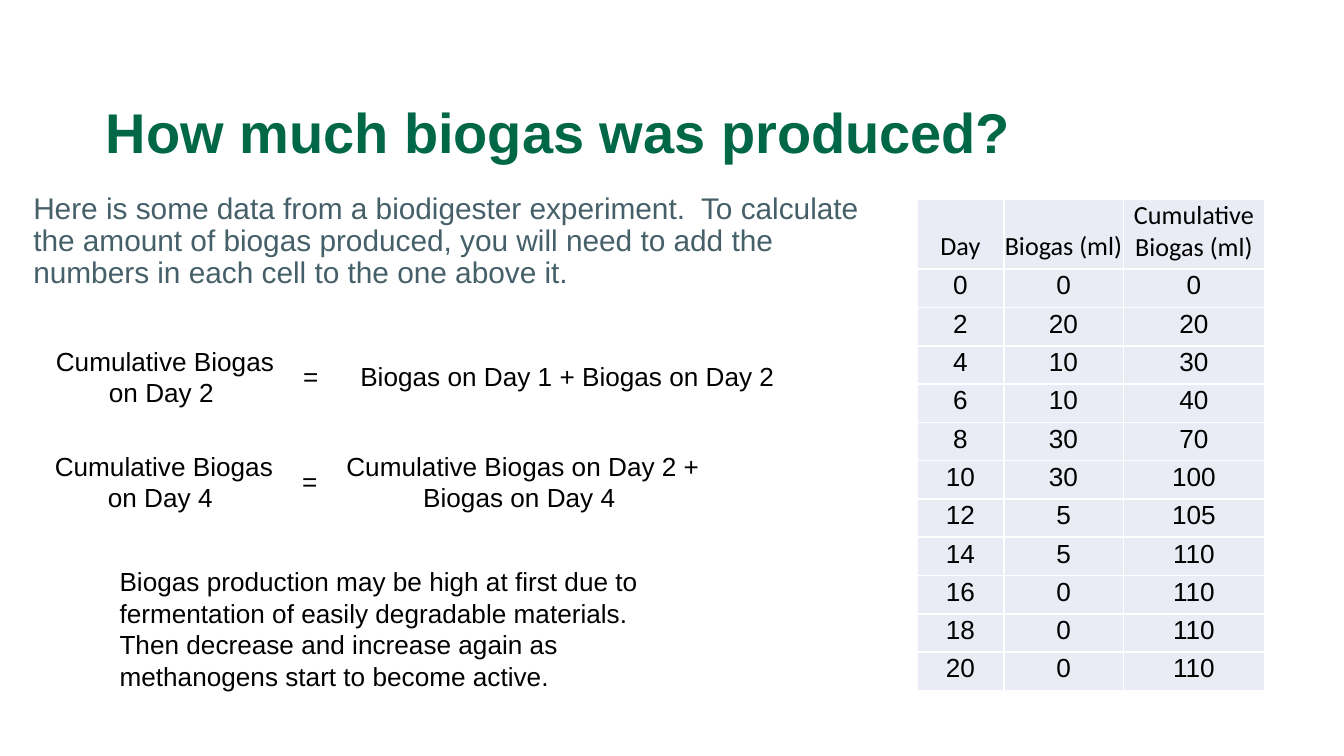
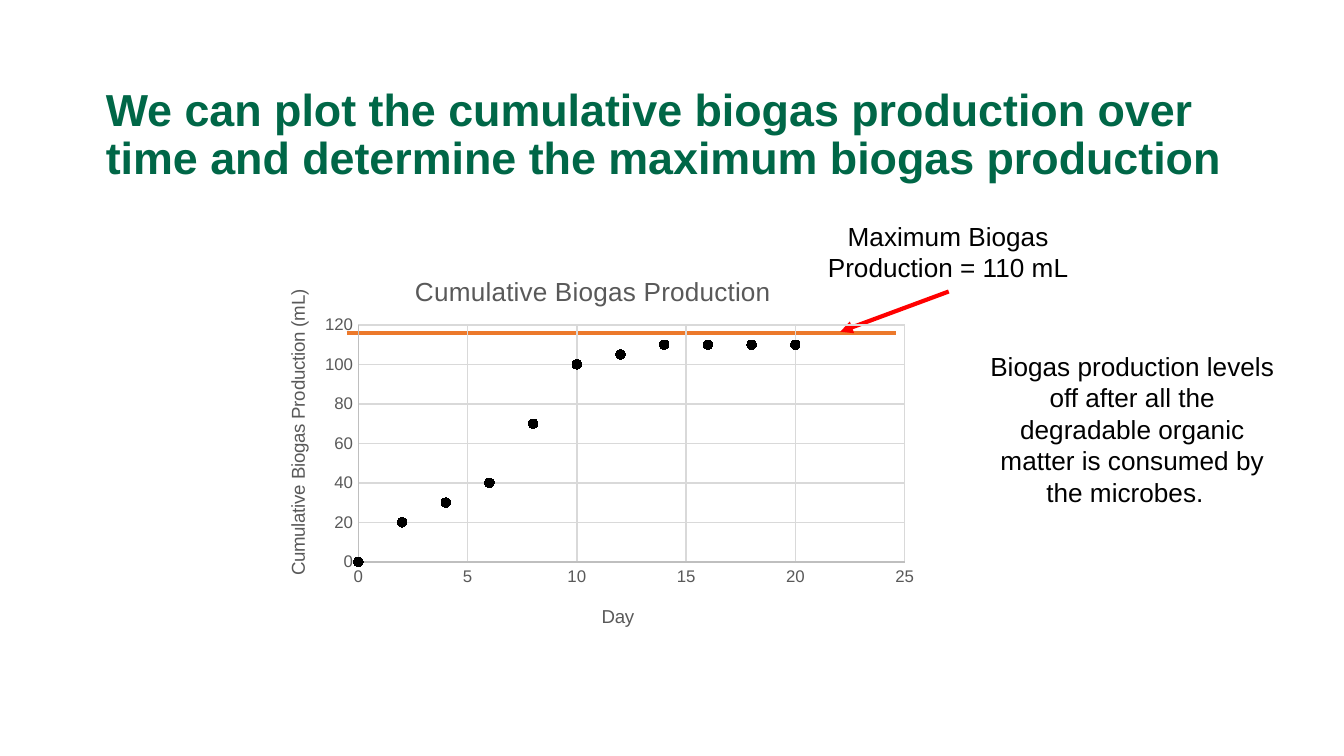
from lxml import etree
from pptx import Presentation
from pptx.chart.data import XyChartData
from pptx.dml.color import RGBColor
from pptx.enum.chart import XL_CHART_TYPE, XL_MARKER_STYLE, XL_TICK_MARK
from pptx.enum.shapes import MSO_CONNECTOR
from pptx.enum.text import MSO_ANCHOR, PP_ALIGN
from pptx.oxml import parse_xml
from pptx.oxml.ns import nsdecls, qn
from pptx.util import Cm, Pt

LEFT, CENTER = PP_ALIGN.LEFT, PP_ALIGN.CENTER
TOP, MIDDLE, BOTTOM = MSO_ANCHOR.TOP, MSO_ANCHOR.MIDDLE, MSO_ANCHOR.BOTTOM
NO_TICKS = XL_TICK_MARK.NONE

# Shared style
GREEN, SLATE, BLACK, WHITE = "006747", "466069", "000000", "FFFFFF"
CELL_BLUE, ORANGE, RED = "E9EBF5", "EC792B", "FF0000"
CHART_TEXT, AXIS_LINE, GRID_LINE = "595959", "BFBFBF", "D9D9D9"
TITLE_BOX = (1.75, 1.6, 21.9, 1.93)

# Content
DATA_TITLE = "How much biogas was produced?"
PLOT_TITLE = ("We can plot the cumulative biogas production over time "
              "and determine the maximum biogas production")
INTRO = ("Here is some data from a biodigester experiment.  To calculate the amount of "
         "biogas produced, you will need to add the numbers in each cell to the one above it.")
EXPLANATION = ("Biogas production may be high at first due to fermentation of easily degradable "
               "materials.  Then decrease and increase again as methanogens start to become active.")
MAXIMUM = "Maximum Biogas Production = 110 mL"
LEVELLING = ("Biogas production levels off after all the degradable organic matter "
             "is consumed by the microbes.  ")
# result, sum, centre line, left of result, left of sum, lines in sum (cm)
EQUATIONS = [
    ("Cumulative Biogas on Day 2 ", "Biogas on Day 1 + Biogas on Day 2 ", 7.12, 0.76, 6.4, 1),
    ("Cumulative Biogas on Day 4 ", "Cumulative Biogas on Day 2 + Biogas on Day 4 ",
     9.11, 0.74, 5.49, 2),
]
LINE_HEIGHTS = {1: 0.86, 2: 1.45}
RESULT_WIDTH, SIGN_WIDTH, SUM_WIDTH = 4.72, 0.91, 8.79

HEADINGS = ("Day", "Biogas (ml)", "Cumulative Biogas (ml)")
COLUMN_WIDTHS = (1.64, 2.26, 2.67)
DAYS = list(range(0, 21, 2))
DAILY = [0, 20, 10, 10, 30, 30, 5, 5, 0, 0, 0]
CUMULATIVE = [0, 20, 30, 40, 70, 100, 105, 110, 110, 110, 110]


def rgb(value):
    return RGBColor.from_string(value)


def style_font(font, size, color, bold=False, name="Arial"):
    font.name, font.size, font.bold = name, Pt(size), bold
    font.color.rgb = rgb(color)


def fill_text(frame, text, size=14, color=BLACK, bold=False, name="Arial",
              align=LEFT, spacing=None, indent=None):
    paragraph = frame.paragraphs[0]
    paragraph.alignment = align
    if spacing:
        paragraph.line_spacing = spacing
    if indent:
        paragraph._p.get_or_add_pPr().set("marL", str(Cm(indent)))
    run = paragraph.add_run()
    run.text = text
    style_font(run.font, size, color, bold, name)


def add_text(slide, text, box, anchor=TOP, **text_format):
    frame = slide.shapes.add_textbox(*map(Cm, box)).text_frame
    frame.word_wrap = True
    frame.vertical_anchor = anchor
    fill_text(frame, text, **text_format)


def add_titled_slide(deck, title, size):
    slide = deck.slides.add_slide(deck.slide_layouts[6])
    add_text(slide, title, TITLE_BOX, anchor=MIDDLE, size=size, color=GREEN,
             bold=True, spacing=0.9)
    return slide


def add_line(slide, start, end, color, arrow=False):
    line = slide.shapes.add_connector(MSO_CONNECTOR.STRAIGHT, *map(Cm, start + end))
    line.line.color.rgb = rgb(color)
    line.line.width = Pt(2.25)
    properties = line._element.spPr
    if arrow:
        etree.SubElement(properties.find(qn("a:ln")), qn("a:tailEnd"), type="triangle")
    etree.SubElement(properties, qn("a:effectLst"))


def style_cell(cell):
    cell.margin_left = cell.margin_right = cell.margin_top = 0
    cell.margin_bottom = Cm(0.13)
    cell.vertical_anchor = BOTTOM
    cell.fill.solid()
    cell.fill.fore_color.rgb = rgb(CELL_BLUE)
    for position, side in enumerate(("lnL", "lnR", "lnT", "lnB")):
        border = parse_xml(
            f'<a:{side} {nsdecls("a")} w="{Pt(1)}"><a:solidFill>'
            f'<a:srgbClr val="{WHITE}"/></a:solidFill></a:{side}>')
        cell._tc.get_or_add_tcPr().insert(position, border)


def add_biogas_table(slide):
    rows = [HEADINGS, *zip(DAYS, DAILY, CUMULATIVE)]
    frame = slide.shapes.add_table(len(rows), len(HEADINGS), Cm(17.33), Cm(3.77),
                                   Cm(sum(COLUMN_WIDTHS)), Cm(9.22))
    table = frame.table
    table.first_row = table.horz_banding = False
    for column, width in zip(table.columns, COLUMN_WIDTHS):
        column.width = Cm(width)
    for r, values in enumerate(rows):
        table.rows[r].height = Cm(0.56)
        for c, value in enumerate(values):
            cell = table.cell(r, c)
            style_cell(cell)
            fill_text(cell.text_frame, str(value), align=CENTER,
                      name="Arial" if r else "Calibri")
    frame.height = Cm(9.22)


def place(element, index, inner=False, **fractions):
    """Give a chart part a manual layout in fractions of the chart."""
    for old in element.findall(qn("c:layout")):
        element.remove(old)
    layout = etree.Element(qn("c:layout"))
    manual = etree.SubElement(layout, qn("c:manualLayout"))
    if inner:
        etree.SubElement(manual, qn("c:layoutTarget"), val="inner")
    for key in ("x", "y"):
        etree.SubElement(manual, qn(f"c:{key}Mode"), val="edge")
    for key, value in fractions.items():
        etree.SubElement(manual, qn(f"c:{key}"), val=str(value))
    element.insert(index, layout)


def style_axis(axis, title, maximum, step, x, y):
    axis.minimum_scale, axis.maximum_scale, axis.major_unit = 0, maximum, step
    axis.major_tick_mark = axis.minor_tick_mark = NO_TICKS
    axis.has_major_gridlines = True
    style_font(axis.tick_labels.font, 9, CHART_TEXT)
    for line, color in ((axis.format.line, AXIS_LINE),
                        (axis.major_gridlines.format.line, GRID_LINE)):
        line.color.rgb = rgb(color)
        line.width = Pt(0.75)
    fill_text(axis.axis_title.text_frame, title, size=10, color=CHART_TEXT, align=CENTER)
    place(axis.axis_title._element, 1, x=x, y=y)


def add_biogas_chart(slide):
    data = XyChartData()
    points = data.add_series("Series 1")
    for day, volume in zip(DAYS, CUMULATIVE):
        points.add_data_point(day, volume)
    chart = slide.shapes.add_chart(XL_CHART_TYPE.XY_SCATTER, Cm(4.83), Cm(4.65),
                                   Cm(12.7), Cm(7.62), data).chart
    style_font(chart.font, 10, BLACK)
    chart.has_legend = False
    chart.has_title = True
    fill_text(chart.chart_title.text_frame, "Cumulative Biogas Production",
              color=CHART_TEXT, align=CENTER)
    place(chart.chart_title._element, 1, x=0.23, y=0.06)

    # Axes
    style_axis(chart.category_axis, "Day", 25, 5, x=0.51, y=0.88)
    style_axis(chart.value_axis, "Cumulative Biogas Production (mL)", 120, 20, x=0.04, y=0.1)
    upright = chart.value_axis.axis_title.text_frame._txBody.find(qn("a:bodyPr"))
    upright.set("rot", "-5400000")
    upright.set("vert", "horz")

    # Points without a joining line
    plot = chart.plots[0]
    plot.vary_by_categories = False
    series = plot.series[0]
    series.smooth = False
    series.format.line.fill.background()
    series.marker.style = XL_MARKER_STYLE.CIRCLE
    series.marker.size = 5
    series.marker.format.fill.solid()
    series.marker.format.fill.fore_color.rgb = rgb(BLACK)
    series.marker.format.line.color.rgb = rgb(BLACK)

    # Clear backgrounds, so the lines behind the chart show
    space = chart._chartSpace
    chart_part = space.find(qn("c:chart"))
    plot_area = chart_part.find(qn("c:plotArea"))
    place(plot_area, 0, inner=True, x=0.153, y=0.196, w=0.813, h=0.588)
    clear = f'<c:spPr {nsdecls("c", "a")}><a:noFill/><a:ln><a:noFill/></a:ln></c:spPr>'
    plot_area.append(parse_xml(clear))
    chart_part.addnext(parse_xml(clear))


def build_data_slide(deck):
    slide = add_titled_slide(deck, DATA_TITLE, 30)
    add_text(slide, INTRO, (0.13, 3.53, 16.97, 2.39), size=16, color=SLATE,
             spacing=0.9, indent=0.25)
    add_biogas_table(slide)
    for result, total, centre, left, total_left, lines in EQUATIONS:
        parts = [(result, left, RESULT_WIDTH, 2, CENTER),
                 ("=", left + RESULT_WIDTH, SIGN_WIDTH, 1, LEFT),
                 (total, total_left, SUM_WIDTH, lines, CENTER)]
        for text, x, width, count, align in parts:
            height = LINE_HEIGHTS[count]
            add_text(slide, text, (x, centre - height / 2, width, height), align=align)
    add_text(slide, EXPLANATION, (2.01, 10.57, 11.48, 2.64))


def build_plot_slide(deck):
    slide = add_titled_slide(deck, PLOT_TITLE, 24)
    add_line(slide, (6.55, 6.3), (16.94, 6.3), ORANGE)
    add_text(slide, MAXIMUM, (14.81, 4.04, 6.22, 1.45), align=CENTER)
    add_line(slide, (17.93, 5.51), (15.88, 6.27), RED, arrow=True)
    add_biogas_chart(slide)
    add_text(slide, LEVELLING, (18.44, 6.5, 5.92, 3.25), align=CENTER)


def main():
    deck = Presentation()
    deck.slide_width, deck.slide_height = Cm(25.4), Cm(14.29)
    build_data_slide(deck)
    build_plot_slide(deck)
    deck.save("out.pptx")


if __name__ == "__main__":
    main()
